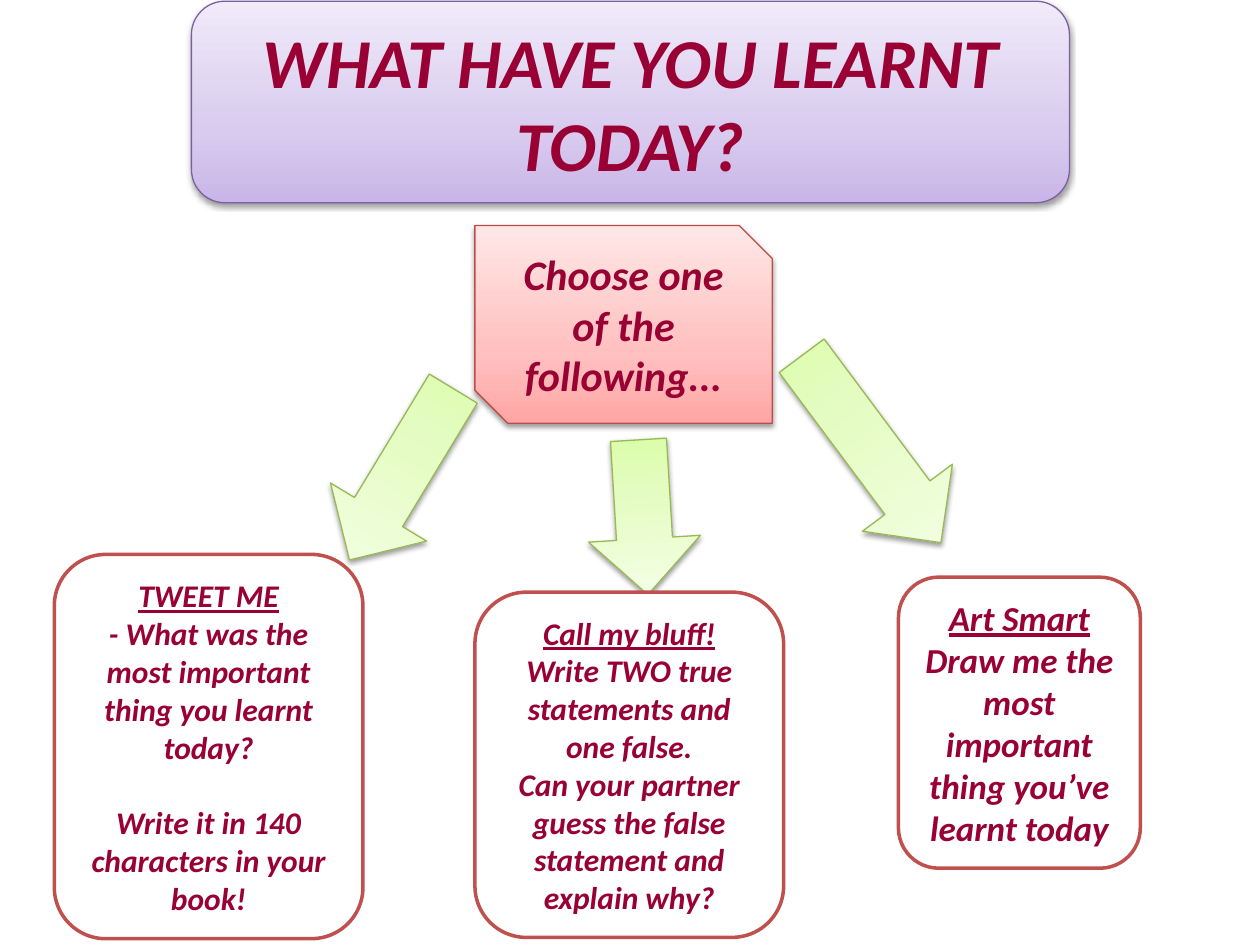
"""Build a lesson review slide: a title, a prompt and three tasks to choose from."""
from dataclasses import dataclass

from lxml import etree
from pptx import Presentation
from pptx.dml.color import RGBColor
from pptx.enum.shapes import MSO_SHAPE
from pptx.enum.text import MSO_ANCHOR, PP_ALIGN
from pptx.oxml.ns import qn
from pptx.shapes.autoshape import Shape
from pptx.slide import Slide
from pptx.text.text import _Paragraph as Paragraph
from pptx.util import Pt

ROUND = MSO_SHAPE.ROUNDED_RECTANGLE
SNIP = MSO_SHAPE.SNIP_2_DIAG_RECTANGLE
ARROW = MSO_SHAPE.UP_ARROW
MIDDLE = MSO_ANCHOR.MIDDLE
CENTER = PP_ALIGN.CENTER

FONT = "Calibri"
COLORS = {
    "text": "990033",
    "white": "FFFFFF",
    "black": "000000",
    "card": "C0504D",
    "purple": "7D60A0",
    "red": "BF4C48",
    "green": "98B955",
}
BLENDS = {
    "purple": {0: "C9B5E8", 35: "D8CBEE", 100: "F0EAF9"},
    "red": {0: "FFA6A5", 35: "FFC0BF", 100: "FFE7E7"},
    "green": {0: "DAFDA7", 35: "E4FCC2", 100: "F5FFE7"},
}


@dataclass
class Box:
    left: float
    top: float
    width: float
    height: float


@dataclass
class Banner:
    kind: MSO_SHAPE
    box: Box
    hue: str
    text: str
    size: float


@dataclass
class Pointer:
    box: Box
    turn: float


@dataclass
class Card:
    box: Box
    size: float
    head: str
    tasks: list[list[str]]


BANNERS = [
    Banner(ROUND, Box(109.4, 0.7, 501.8, 115.2), "purple", "WHAT HAVE YOU LEARNT TODAY?", 40),
    Banner(SNIP, Box(271.4, 128.9, 169.9, 113), "red", "Choose one of the following...", 24),
]
POINTERS = [
    Pointer(Box(197.3, 213.8, 64.1, 114.5), 211.2),
    Pointer(Box(335.5, 251.3, 64.1, 88.6), 176.5),
    Pointer(Box(465.8, 190.1, 64.1, 133.2), 143.3),
]
CARDS = [
    Card(Box(31, 316.8, 176.4, 219.6), 18, "TWEET ME", [
        ["- What was the most important thing you learnt today?"],
        ["Write it in 140 characters in your book!"],
    ]),
    Card(Box(271.4, 338.4, 176.4, 197.3), 18, "Call my bluff!", [[
        "Write TWO true statements and one false.",
        "Can your partner guess the false statement and explain why?",
    ]]),
    Card(Box(513.4, 329.8, 138.2, 166.3), 20, "Art Smart", [
        ["Draw me the most important thing you’ve learnt today"],
    ]),
]


def add_shape(slide: Slide, kind: MSO_SHAPE, box: Box, line: str, weight: float) -> Shape:
    """Add an outlined shape with no shadow."""
    shape = slide.shapes.add_shape(
        kind, Pt(box.left), Pt(box.top), Pt(box.width), Pt(box.height))
    shape.line.color.rgb = RGBColor.from_string(COLORS[line])
    shape.line.width = Pt(weight)
    shape.shadow.inherit = False
    return shape


def add_color(parent: etree._Element, value: str) -> etree._Element:
    """Add a plain colour to an XML node."""
    return etree.SubElement(parent, qn("a:srgbClr"), val=value)


def add_glossy(slide: Slide, kind: MSO_SHAPE, box: Box, hue: str) -> Shape:
    """Add a shape with an upward blend and a soft shadow."""
    shape = add_shape(slide, kind, box, hue, 0.75)
    shape.fill.gradient()
    shape.fill.gradient_angle = 90
    stops = shape.element.spPr.find(f".//{qn('a:gsLst')}")
    for stop in list(stops):
        stops.remove(stop)
    for place, value in BLENDS[hue].items():
        add_color(etree.SubElement(stops, qn("a:gs"), pos=str(place * 1000)), value)
    shadow = etree.SubElement(
        shape.element.spPr.find(qn("a:effectLst")), qn("a:outerShdw"),
        blurRad=str(Pt(3.1)), dist=str(Pt(1.6)), dir="5400000", rotWithShape="0")
    etree.SubElement(add_color(shadow, COLORS["black"]), qn("a:alpha"), val="38000")
    return shape


def set_font(para: Paragraph, size: float) -> None:
    """Give a paragraph the bold slanted look of the slide."""
    para.alignment = CENTER
    font = para.font
    font.name, font.size = FONT, Pt(size)
    font.bold = font.italic = True
    font.color.rgb = RGBColor.from_string(COLORS["text"])


def set_frame(shape: Shape) -> None:
    """Wrap the text of a shape and centre it from top to bottom."""
    shape.text_frame.word_wrap = True
    shape.text_frame.vertical_anchor = MIDDLE


def draw_banner(slide: Slide, banner: Banner) -> None:
    """Draw a blended shape with one line of thought."""
    shape = add_glossy(slide, banner.kind, banner.box, banner.hue)
    set_frame(shape)
    para = shape.text_frame.paragraphs[0]
    set_font(para, banner.size)
    para.add_run().text = banner.text


def draw_pointer(slide: Slide, pointer: Pointer) -> None:
    """Draw a turned block arrow."""
    add_glossy(slide, ARROW, pointer.box, "green").rotation = pointer.turn


def draw_card(slide: Slide, card: Card) -> None:
    """Draw a task card with an underlined head."""
    shape = add_shape(slide, ROUND, card.box, "card", 2)
    shape.fill.solid()
    shape.fill.fore_color.rgb = RGBColor.from_string(COLORS["white"])
    set_frame(shape)
    frame = shape.text_frame
    para = frame.paragraphs[0]
    head = para.add_run()
    head.text, head.font.underline = card.head, True
    for index, lines in enumerate(card.tasks):
        if index:
            para = frame.add_paragraph()
            para.space_before = Pt(card.size * 1.2)
        set_font(para, card.size)
        for line in lines:
            if para.runs:
                para.add_line_break()
            para.add_run().text = line


def main() -> None:
    """Build and save the slide."""
    deck = Presentation()
    deck.slide_width, deck.slide_height = Pt(720), Pt(540)
    slide = deck.slides.add_slide(deck.slide_layouts[6])
    for banner in BANNERS:
        draw_banner(slide, banner)
    for pointer in POINTERS:
        draw_pointer(slide, pointer)
    for card in CARDS:
        draw_card(slide, card)
    deck.save("out.pptx")


if __name__ == "__main__":
    main()
